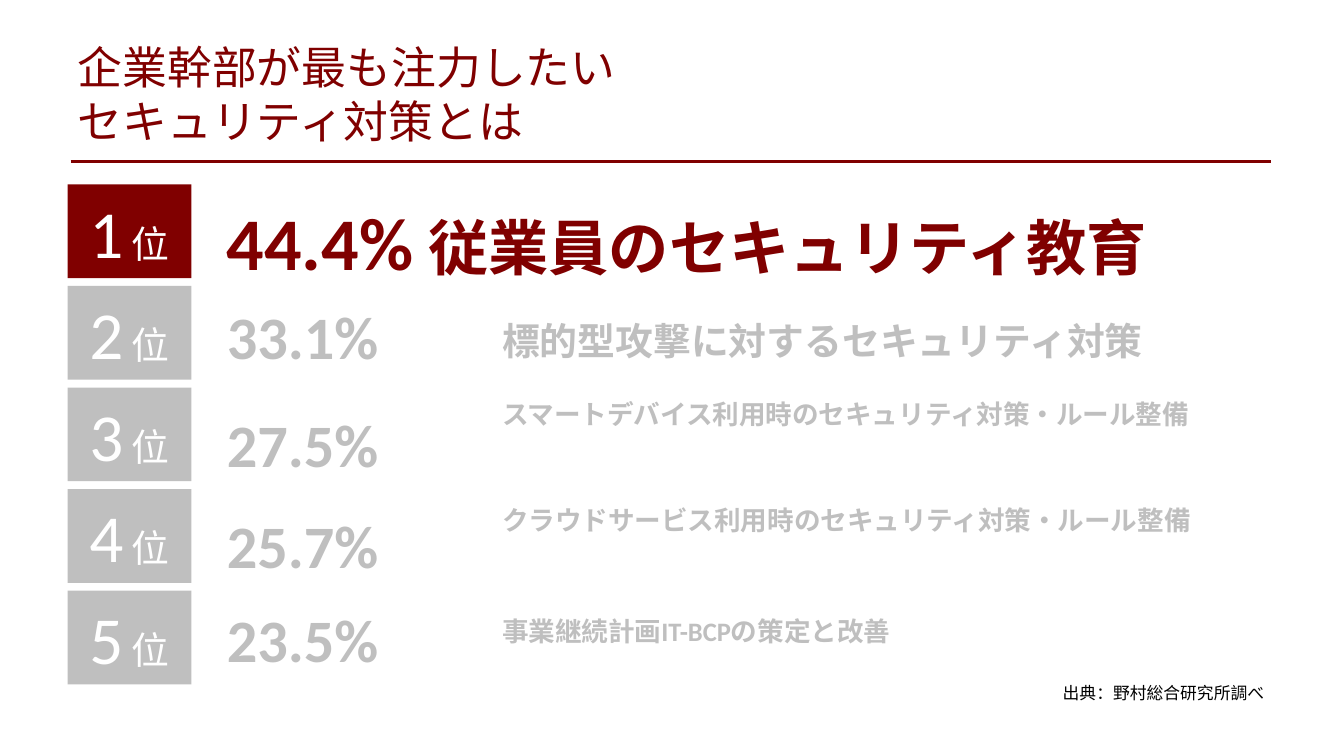
from lxml import etree
from pptx import Presentation
from pptx.dml.color import RGBColor
from pptx.enum.shapes import MSO_CONNECTOR as Conn, MSO_SHAPE as Shape
from pptx.enum.text import MSO_ANCHOR as Anchor, MSO_AUTO_SIZE as Fit, PP_ALIGN as Align
from pptx.oxml.ns import qn
from pptx.util import Inches, Pt

RED = RGBColor(0x80, 0x00, 0x00)
GREY = RGBColor(0xBF, 0xBF, 0xBF)
WHITE = RGBColor(0xFF, 0xFF, 0xFF)
BLACK = RGBColor(0x00, 0x00, 0x00)
FACE = "Calibri"

# Rank rows: share, share top, measure, measure top, height, size
ROWS = [
    ("33.1%", 2.9, "標的型攻撃に対するセキュリティ対策", 3.08, 0.58, 27),
    ("27.5%", 3.97, "スマートデバイス利用時のセキュリティ対策・ルール整備", 3.88, 0.45, 19),
    ("25.7%", 4.97, "クラウドサービス利用時のセキュリティ対策・ルール整備", 4.93, 0.45, 19),
    ("23.5%", 5.91, "事業継続計画IT-BCPの策定と改善", 6.03, 0.45, 19),
]


def style(run, size, color, bold=False):
    font = run.font
    for key, value in {"size": Pt(size), "name": FACE, "bold": bold}.items():
        setattr(font, key, value)
    font.color.rgb = color
    # East Asian letters use the same face
    east = etree.SubElement(run._r.get_or_add_rPr(), qn("a:ea"))
    east.set("typeface", FACE)


def fill_text(frame, parts, color, bold=False, align=Align.LEFT, **extra):
    form = {
        "margin_left": Inches(0.13), "margin_right": Inches(0.13),
        "margin_top": Inches(0.07), "margin_bottom": Inches(0.07),
        "word_wrap": True, **extra,
    }
    for key, value in form.items():
        setattr(frame, key, value)
    para = frame.paragraphs[0]
    para.alignment = align
    for text, size in parts:
        run = para.add_run()
        run.text = text
        style(run, size, color, bold)
    return para


def add_text(slide, box, parts, color, **extra):
    area = slide.shapes.add_textbox(*map(Inches, box))
    return fill_text(area.text_frame, parts, color,
                     auto_size=Fit.SHAPE_TO_FIT_TEXT, **extra)


def add_head(slide, left, top, width, height):
    title = slide.shapes.title
    spots = {"left": left, "top": top, "width": width, "height": height}
    for key, value in spots.items():
        setattr(title, key, Inches(value))
    frame = title.text_frame
    frame.text = "企業幹部が最も注力したい\vセキュリティ対策とは"
    frame.auto_size = Fit.NONE
    frame.vertical_anchor = Anchor.MIDDLE
    para = frame.paragraphs[0]
    para.alignment = Align.LEFT
    for run in para.runs:
        style(run, 32, RED)
    # Rule below the title
    level = Inches(top + height + 0.05)
    rule = slide.shapes.add_connector(
        Conn.STRAIGHT, Inches(left + 0.03), level, Inches(left + 11.94), level)
    rule.line.color.rgb = RED
    rule.line.width = Pt(2)
    etree.SubElement(rule._element.spPr, qn("a:effectLst"))


def add_ranks(slide, left, top, width, height, count=5):
    tall = 0.93
    step = (height - tall) / (count - 1)
    for i in range(count):
        tile = slide.shapes.add_shape(
            Shape.RECTANGLE, Inches(left), Inches(top + i * step),
            Inches(width), Inches(tall))
        tile.shadow.inherit = False
        tile.fill.solid()
        tile.fill.fore_color.rgb = GREY if i else RED
        tile.line.fill.background()
        fill_text(tile.text_frame, [(str(i + 1), 48), (" 位", 27)], WHITE,
                  align=Align.CENTER, vertical_anchor=Anchor.MIDDLE)


def add_lead(slide, *box):
    para = add_text(slide, box, [("44.4%\t", 53), ("従業員のセキュリティ教育", 43)],
                    RED, bold=True)
    tabs = etree.SubElement(para._p.get_or_add_pPr(), qn("a:tabLst"))
    etree.SubElement(tabs, qn("a:tab"), pos=str(Inches(2)), algn="l")


def add_rows(slide, left, width):
    gap = 2.73
    for share, y, name, top, tall, size in ROWS:
        add_text(slide, (left, y, 2.44, 0.85), [(share, 43)], GREY, bold=True)
        add_text(slide, (left + gap, top, width - gap, tall), [(name, size)],
                 GREY, bold=True)


def add_credit(slide, *box):
    add_text(slide, box, [("出典：野村総合研究所調べ", 12)], BLACK,
             align=Align.RIGHT, word_wrap=False)


def main():
    deck = Presentation()
    deck.slide_width, deck.slide_height = Inches(13.33), Inches(7.5)
    slide = deck.slides.add_slide(deck.slide_layouts[5])
    add_head(slide, 0.67, 0.3, 12, 1.25)
    add_ranks(slide, 0.67, 1.83, 1.23, 4.96)
    add_lead(slide, 2.12, 1.88, 10.54, 1.03)
    add_rows(slide, 2.12, 10.55)
    add_credit(slide, 10.38, 6.7, 2.29, 0.34)
    deck.save("out.pptx")


if __name__ == "__main__":
    main()
